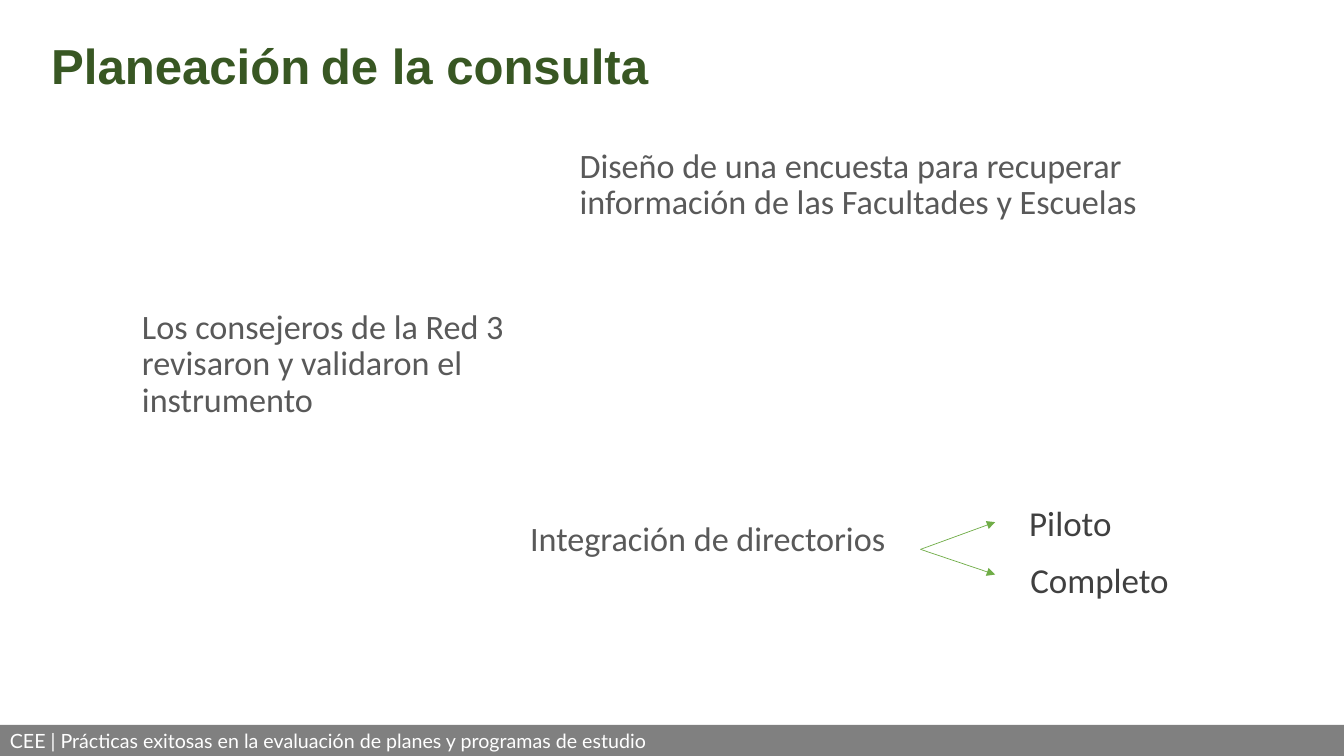
from lxml import etree
from pptx import Presentation
from pptx.dml.color import RGBColor
from pptx.enum.shapes import MSO_CONNECTOR, MSO_SHAPE
from pptx.enum.text import MSO_ANCHOR, PP_ALIGN
from pptx.oxml.ns import qn
from pptx.util import Pt

PX = 9144  # 100 px to the inch


def rgb(value):
    return RGBColor.from_string(value)


def write(sp, runs, color, anchor=MSO_ANCHOR.MIDDLE, wrap=True, spacing=1.0,
          align=PP_ALIGN.LEFT, bold=False):
    """Fill a shape with one paragraph of (text, size, font) runs."""
    tf = sp.text_frame
    tf.word_wrap = wrap
    tf.vertical_anchor = anchor
    p = tf.paragraphs[0]
    p.alignment = align
    p.line_spacing = spacing
    for text, size, name in runs:
        r = p.add_run()
        r.text = text
        for key, value in {"size": Pt(size), "name": name, "bold": bold}.items():
            setattr(r.font, key, value)
        r.font.color.rgb = rgb(color)


prs = Presentation()
prs.slide_width, prs.slide_height = 1333 * PX, 750 * PX
s = prs.slides.add_slide(prs.slide_layouts[6])

# Title
sp = s.shapes.add_textbox(41 * PX, 40 * PX, 862 * PX, 57 * PX)
write(sp, [("Planeación", 35.1, "Arial"), (" ", 33.3, "Calibri"),
           ("de la consulta", 35.1, "Arial")], "385723", spacing=0.9, bold=True)

# Planning steps
steps = [
    (565, 116, 651, "Diseño de una encuesta para recuperar información de las Facultades y Escuelas"),
    (131, 294, 385, "Los consejeros de la Red 3 revisaron y validaron el instrumento"),
    (516, 468, 387, "Integración de directorios"),
]
for x, y, w, text in steps:
    sp = s.shapes.add_textbox(x * PX, y * PX, w * PX, 136 * PX)
    write(sp, [(text, 24.4, "Calibri")], "595959", spacing=0.9)

# Directory types, each with its arrow
directories = [("Piloto", 1011, 493, 103, 518), ("Completo", 1012, 549, 159, 570)]
for text, x, y, w, tip in directories:
    line = s.shapes.add_connector(MSO_CONNECTOR.STRAIGHT, 913 * PX, 545 * PX, 987 * PX, tip * PX)
    line.line.color.rgb = rgb("70AD47")
    line.line.width = Pt(0.5)
    etree.SubElement(line.line._get_or_add_ln(), qn("a:tailEnd"), type="triangle")
    etree.SubElement(line._element.spPr, qn("a:effectLst"))
    sp = s.shapes.add_textbox(x * PX, y * PX, w * PX, 52 * PX)
    write(sp, [(text, 25, "Calibri")], "404040", anchor=MSO_ANCHOR.TOP, wrap=False)

# Footer
footer = s.shapes.add_shape(MSO_SHAPE.RECTANGLE, 0, 719 * PX, 1333 * PX, 31 * PX)
footer.shadow.inherit = False
footer.fill.solid()
footer.fill.fore_color.rgb = rgb("808080")
footer.line.fill.background()
write(footer, [("CEE | Prácticas exitosas en la evaluación de planes y programas de estudio", 14, "Lato")],
      "FFFFFF", align=PP_ALIGN.JUSTIFY)

prs.save("out.pptx")
